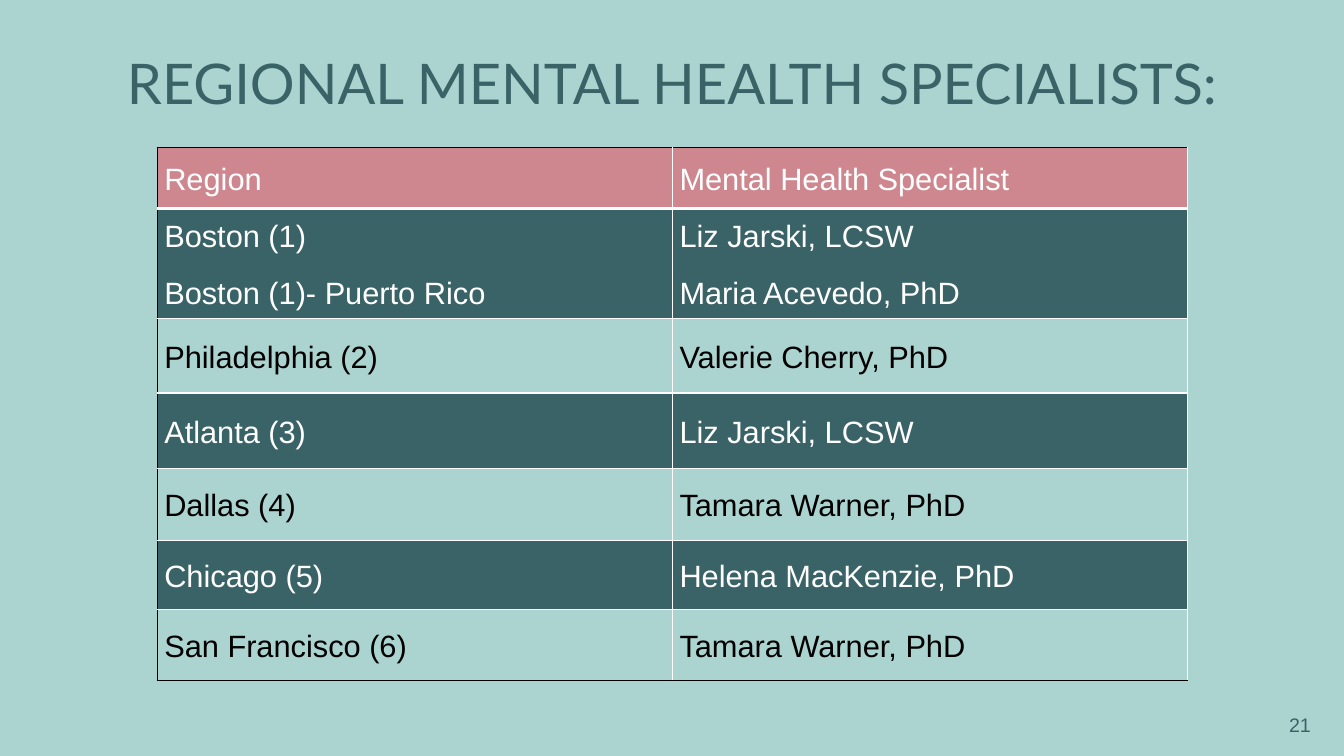
from pptx import Presentation
from pptx import util as u
from pptx.dml.color import RGBColor
from pptx.enum import text
from pptx.oxml import parse_xml
from pptx.oxml.ns import nsdecls

MINT = RGBColor(0xAB, 0xD3, 0xD0)
TEAL = RGBColor(0x3A, 0x63, 0x67)
ROSE = RGBColor(0xCE, 0x87, 0x8F)
WHITE = RGBColor(0xFF, 0xFF, 0xFF)
BLACK = RGBColor(0, 0, 0)

ROWS = [
    (0.61, "Region", "Mental Health Specialist"),
    (1.09, "Boston (1)\nBoston (1)- Puerto Rico", "Liz Jarski, LCSW\nMaria Acevedo, PhD"),
    (0.74, "Philadelphia (2)", "Valerie Cherry, PhD"),
    (0.75, "Atlanta (3)", "Liz Jarski, LCSW"),
    (0.71, "Dallas (4)", "Tamara Warner, PhD"),
    (0.69, "Chicago (5)", "Helena MacKenzie, PhD"),
    (0.70, "San Francisco (6)", "Tamara Warner, PhD"),
]


def set_all(obj, values):
    for name, value in values.items():
        setattr(obj, name, value)


class Deck:
    title_font = {"name": "Lato", "size": u.Pt(40), "bold": False}
    number_font = {"name": "Arial", "size": u.Pt(14)}
    cell_font = {"name": "Arial", "size": u.Pt(22), "bold": False}
    cell_format = {
        "margin_left": u.Inches(0.07), "margin_right": u.Inches(0.07),
        "margin_top": u.Inches(0.03), "margin_bottom": u.Inches(0.03),
        "vertical_anchor": text.MSO_ANCHOR.MIDDLE,
    }

    def __init__(self):
        self.prs = Presentation()
        self.prs.slide_width = u.Inches(13.33)
        self.prs.slide_height = u.Inches(7.5)
        self.s = self.prs.slides.add_slide(self.prs.slide_layouts[5])
        fill = self.s.background.fill
        fill.solid()
        fill.fore_color.rgb = MINT

    def add_lines(self, tf, content, font, color, paragraph):
        """Fill a text frame, one paragraph per line of content."""
        for i, line in enumerate(content.split("\n")):
            p = tf.add_paragraph() if i else tf.paragraphs[0]
            set_all(p, paragraph)
            if i:
                p.space_before = u.Pt(14)
            r = p.add_run()
            r.text = line
            set_all(r.font, font)
            r.font.color.rgb = color

    def title(self, content, left, top, width, height):
        sp = self.s.shapes.title
        set_all(sp, {"left": u.Inches(left), "top": u.Inches(top),
                     "width": u.Inches(width), "height": u.Inches(height)})
        tf = sp.text_frame
        set_all(tf, {"margin_left": 0, "margin_right": 0, "margin_top": 0,
                     "margin_bottom": 0, "word_wrap": True,
                     "auto_size": text.MSO_AUTO_SIZE.NONE,
                     "vertical_anchor": text.MSO_ANCHOR.TOP})
        self.add_lines(tf, content, self.title_font, TEAL,
                       {"alignment": text.PP_ALIGN.CENTER, "line_spacing": u.Pt(56)})

    def page_number(self, content, left, top, width, height):
        sp = self.s.shapes.add_textbox(*map(u.Inches, (left, top, width, height)))
        tf = sp.text_frame
        set_all(tf, {"word_wrap": True, "vertical_anchor": text.MSO_ANCHOR.MIDDLE})
        self.add_lines(tf, content, self.number_font, TEAL,
                       {"alignment": text.PP_ALIGN.RIGHT})

    def border(self, cell, side, color, width=1):
        cell._tc.get_or_add_tcPr().append(parse_xml(
            f'<a:ln{side} {nsdecls("a")} w="{u.Pt(width)}"><a:solidFill>'
            f'<a:srgbClr val="{color}"/></a:solidFill></a:ln{side}>'))

    def table(self, rows, left, top, col_width):
        height = sum(row[0] for row in rows)
        columns = len(rows[0]) - 1
        frame = self.s.shapes.add_table(
            len(rows), columns,
            *map(u.Inches, (left, top, columns * col_width, height)))
        table = frame.table
        table.horz_banding = False
        for column in table.columns:
            column.width = u.Inches(col_width)
        last = len(rows) - 1
        for i, (row_height, *contents) in enumerate(rows):
            table.rows[i].height = u.Inches(row_height)
            fill = ROSE if i == 0 else TEAL if i % 2 else MINT
            color = BLACK if fill == MINT else WHITE
            for j, content in enumerate(contents):
                cell = table.cell(i, j)
                set_all(cell, self.cell_format)
                self.border(cell, "L", WHITE if j else BLACK)
                self.border(cell, "R", WHITE)
                self.border(cell, "T", WHITE if i else BLACK)
                self.border(cell, "B", BLACK if i == last else WHITE, 1 if i else 3)
                cell.fill.solid()
                cell.fill.fore_color.rgb = fill
                self.add_lines(cell.text_frame, content, self.cell_font, color,
                               {"line_spacing": 1.1})


def main():
    deck = Deck()
    deck.title("REGIONAL MENTAL HEALTH SPECIALISTS:", 1, 0.37, 11.33, 0.76)
    deck.page_number("21", 11.54, 7.05, 1.56, 0.27)
    deck.table(ROWS, 1.56, 1.46, 5.11)
    deck.prs.save("out.pptx")


if __name__ == "__main__":
    main()
